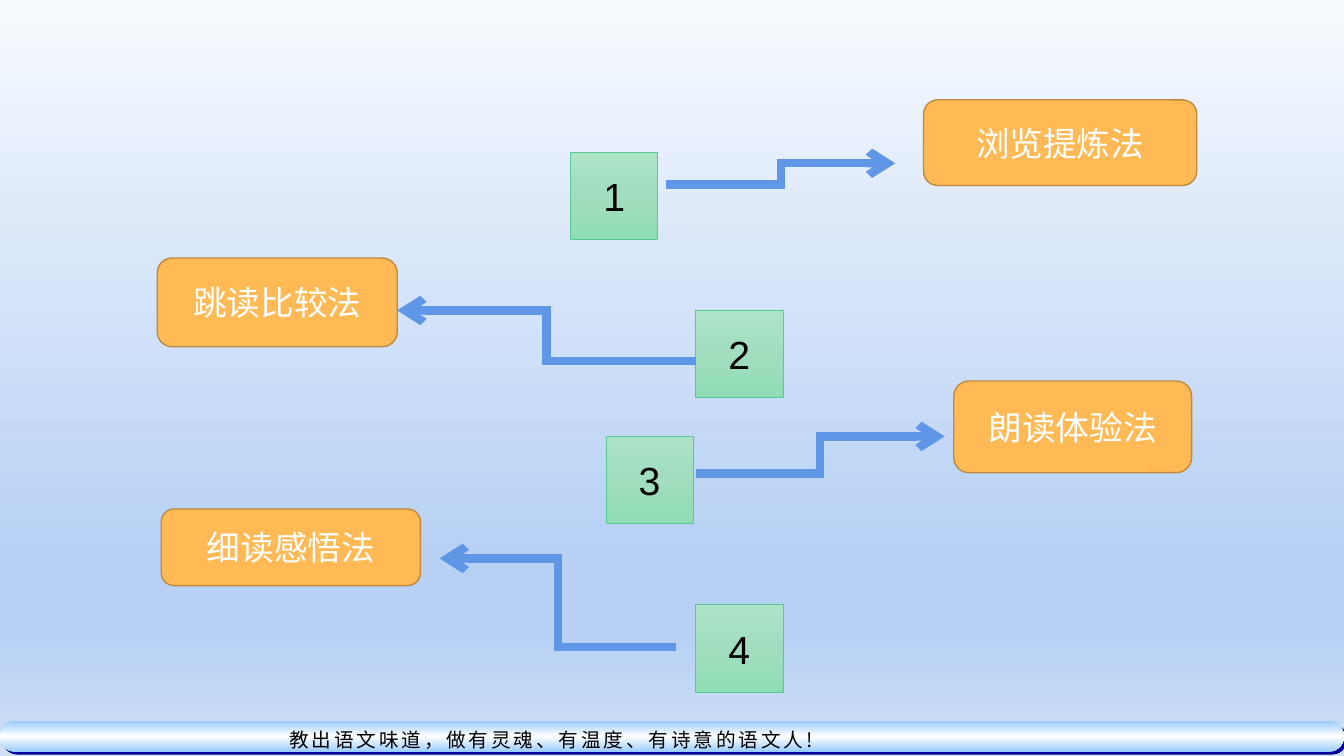
from lxml import etree
from pptx import Presentation
from pptx import util as u
from pptx.dml.color import RGBColor
from pptx.enum import shapes, text
from pptx.oxml import ns

WIDTH, HEIGHT = 13.33, 7.5
BLACK = RGBColor(0, 0, 0)
WHITE = RGBColor(255, 255, 255)
ORANGE = RGBColor(0xFF, 0xBA, 0x55)
BROWN = RGBColor(0xBD, 0x8A, 0x3F)
GREEN = RGBColor(0x56, 0xCA, 0x95)
BLUE = RGBColor(0x60, 0x96, 0xE6)
NAVY = RGBColor(0, 0, 0x99)
SKY_STOPS = [(0, RGBColor(0xF7, 0xFA, 0xFE)), (74, RGBColor(0xB7, 0xD0, 0xF4)),
             (83, RGBColor(0xB7, 0xD0, 0xF4)), (100, RGBColor(0xCF, 0xE0, 0xF7))]
GREEN_STOPS = [(0, RGBColor(0xAE, 0xE3, 0xC8)), (50, RGBColor(0xA1, 0xDD, 0xBE)),
               (100, RGBColor(0x90, 0xDC, 0xB5))]
FOOTER_STOPS = [(0, RGBColor(0x99, 0xCC, 0xFF)), (50, WHITE), (100, RGBColor(0x99, 0xCC, 0xFF))]
LATIN, CHINESE = "Arial", "Noto Sans CJK JP"
NUMBER_SIZE = 0.865

METHODS = [
    ("1", (5.66, 1.51), "浏览提炼法", (9.16, 0.99, 2.71, 0.85), (6.61, 1.83), (8.88, 1.62)),
    ("2", (6.9, 3.08), "跳读比较法", (1.56, 2.56, 2.38, 0.88), (6.9, 3.58), (3.94, 3.08)),
    ("3", (6.01, 4.33), "朗读体验法", (9.46, 3.78, 2.36, 0.91), (6.9, 4.7), (9.37, 4.33)),
    ("4", (6.9, 6), "细读感悟法", (1.6, 5.05, 2.57, 0.76), (6.71, 6.42), (4.36, 5.54)),
]


def inches(values):
    return [u.Inches(value) for value in values]


def add_element(parent, tag, **attributes):
    return etree.SubElement(parent, ns.qn(tag), attributes)


def set_gradient(fill, element, stops):
    fill.gradient()
    fill.gradient_angle = 270
    stop_list = element.xpath(".//a:gsLst")[0]
    for stop in list(stop_list):
        stop_list.remove(stop)
    for position, color in stops:
        stop = add_element(stop_list, "a:gs", pos=str(position * 1000))
        add_element(stop, "a:srgbClr", val=str(color))


def write_text(shape, words, size, color, font_name=LATIN):
    paragraph = shape.text_frame.paragraphs[0]
    paragraph.alignment = text.PP_ALIGN.CENTER
    run = paragraph.add_run()
    run.text = words
    for name, value in {"size": u.Pt(size), "name": font_name}.items():
        setattr(run.font, name, value)
    run.font.color.rgb = color
    add_element(run.font._element, "a:ea", typeface=CHINESE)
    return paragraph, run


def add_box(slide, kind, box, line_color, line_width):
    shape = slide.shapes.add_shape(kind, *inches(box))
    shape.shadow.inherit = False
    shape.line.color.rgb = line_color
    shape.line.width = u.Pt(line_width)
    shape.text_frame.vertical_anchor = text.MSO_ANCHOR.MIDDLE
    return shape


def add_arrow(slide, start, end):
    arrow = slide.shapes.add_connector(shapes.MSO_CONNECTOR.ELBOW, *inches(start + end))
    arrow.line.color.rgb = BLUE
    arrow.line.width = u.Pt(6)
    line = arrow.line._get_or_add_ln()
    add_element(line, "a:miter", lim="800000")
    add_element(line, "a:tailEnd", type="arrow")
    add_element(arrow.element.spPr, "a:effectLst")


def add_method(slide, number, corner, label, label_box, start, end):
    square = add_box(slide, shapes.MSO_SHAPE.RECTANGLE,
                     corner + (NUMBER_SIZE, NUMBER_SIZE), GREEN, 0.5)
    set_gradient(square.fill, square.element, GREEN_STOPS)
    write_text(square, number, 28, BLACK)
    add_arrow(slide, start, end)
    card = add_box(slide, shapes.MSO_SHAPE.ROUNDED_RECTANGLE, label_box, BROWN, 1)
    card.fill.solid()
    card.fill.fore_color.rgb = ORANGE
    write_text(card, label, 24, WHITE)


def add_footer(slide, left, top, width, height):
    bar = slide.shapes.add_shape(shapes.MSO_SHAPE.ROUNDED_RECTANGLE,
                                 *inches((left, top, width, height)))
    bar.adjustments[0] = 0.5
    set_gradient(bar.fill, bar.element, FOOTER_STOPS)
    bar.line.fill.background()
    bar.shadow.inherit = False
    effects = bar.element.spPr.find(ns.qn("a:effectLst"))
    shadow = add_element(effects, "a:outerShdw", dist=str(u.Pt(2.8)), dir="2700000",
                         algn="ctr", rotWithShape="0")
    add_element(shadow, "a:srgbClr", val=str(NAVY))
    motto = slide.shapes.add_textbox(*inches((left + 2.71, top, 5.51, 0.38)))
    motto.text_frame.word_wrap = False
    paragraph, run = write_text(motto, "教出语文味道，做有灵魂、有温度、有诗意的语文人!",
                                14, BLACK, CHINESE)
    paragraph.line_spacing = 1.1
    run.font._element.set("spc", "200")


def main():
    presentation = Presentation()
    presentation.slide_width, presentation.slide_height = inches((WIDTH, HEIGHT))
    slide = presentation.slides.add_slide(presentation.slide_layouts[6])
    set_gradient(slide.background.fill, slide.element, SKY_STOPS)
    add_footer(slide, 0, 7.15, WIDTH, 0.31)
    for method in METHODS:
        add_method(slide, *method)
    presentation.save("out.pptx")


if __name__ == "__main__":
    main()
